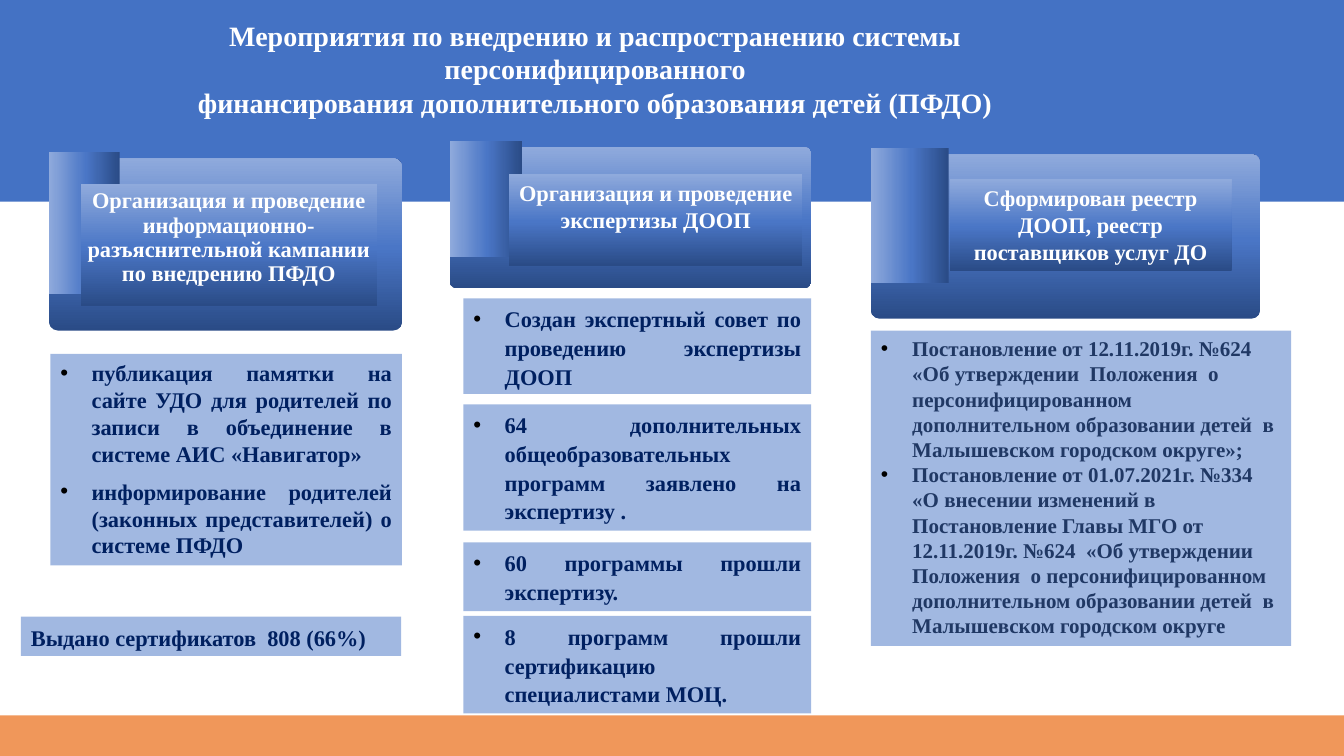
from lxml import etree
from pptx import Presentation
from pptx.dml.color import RGBColor
from pptx.enum.shapes import MSO_SHAPE as Kind
from pptx.enum.text import MSO_ANCHOR as Anchor, PP_ALIGN as Align
from pptx.oxml import parse_xml
from pptx.oxml.ns import nsdecls, qn
from pptx.util import Cm, Pt

FONT = "Times New Roman"
WHITE, NAVY, SLATE = "FFFFFF", "002060", "203864"
BLUE, ORANGE = "4472C4", "ED7D31"
STOPS = [(0, "2A4B86"), (48, "4A76C6"), (100, "8FAADC")]

TITLE = [
    "Мероприятия по внедрению и распространению системы персонифицированного",
    "финансирования дополнительного образования детей (ПФДО)",
]
HEADS = [
    ((1.24, 3.99, 8.89, 4.34), (2.03, 4.65, 7.47, 3.07),
     "Организация и проведение информационно-разъяснительной кампании по внедрению ПФДО",
     {"line": 0.9, "pads": (0, 0.13, 0, 0)}),
    ((11.33, 3.71, 9.12, 3.56), (12.83, 4.39, 7.39, 2.31),
     "Организация и проведение экспертизы ДООП", {}),
    ((21.95, 3.89, 9.8, 4.14), (23.93, 4.52, 7.11, 2.31),
     "Сформирован реестр ДООП, реестр поставщиков услуг ДО", {}),
]
STEPS = [
    (7.52, 2.41, "Создан экспертный совет по проведению экспертизы ДООП"),
    (10.19, 3.18, "64 дополнительных общеобразовательных программ заявлено на экспертизу ."),
    (13.67, 1.73, "60 программы прошли экспертизу."),
    (15.52, 2.46, "8 программ прошли сертификацию специалистами МОЦ."),
]
INFO = [
    "публикация памятки на сайте УДО для родителей по записи в объединение в системе АИС «Навигатор»",
    "информирование родителей (законных представителей) о системе ПФДО",
]
CERTS = "Выдано сертификатов  808 (66%)"
ACTS = [
    "Постановление от 12.11.2019г. №624  «Об утверждении  Положения  о персонифицированном "
    "дополнительном образовании детей  в Малышевском городском округе»;",
    "Постановление от 01.07.2021г. №334 «О внесении изменений в Постановление Главы МГО от "
    "12.11.2019г. №624  «Об утверждении  Положения  о персонифицированном "
    "дополнительном образовании детей  в Малышевском городском округе",
]

deck = Presentation()
deck.slide_width, deck.slide_height = Cm(33.87), Cm(19.05)
slide = deck.slides.add_slide(deck.slide_layouts[6])


def tint(color, code):
    color.rgb = RGBColor.from_string(code)


def block(box, code=None, alpha=100, kind=Kind.RECTANGLE):
    shape = slide.shapes.add_shape(kind, *map(Cm, box))
    shape.shadow.inherit = False
    shape.line.fill.background()
    if code:
        shape.fill.solid()
        tint(shape.fill.fore_color, code)
        if alpha < 100:
            color = shape._element.spPr.find(".//" + qn("a:srgbClr"))
            etree.SubElement(color, qn("a:alpha")).set("val", str(alpha * 1000))
    else:
        shape.fill.gradient()
        grad = shape._element.spPr.find(qn("a:gradFill"))
        stops = "".join(
            f'<a:gs pos="{pos * 1000}"><a:srgbClr val="{tone}"/></a:gs>' for pos, tone in STOPS
        )
        fresh = parse_xml(
            f'<a:gradFill {nsdecls("a")} rotWithShape="1"><a:gsLst>{stops}</a:gsLst>'
            '<a:lin ang="16200000" scaled="0"/></a:gradFill>'
        )
        grad.getparent().replace(grad, fresh)
    return shape


def bullet(para):
    props = para._p.get_or_add_pPr()
    props.set("marL", str(Cm(0.79)))
    props.set("indent", str(-Cm(0.79)))
    color = etree.SubElement(props, qn("a:buClr"))
    etree.SubElement(color, qn("a:srgbClr")).set("val", "000000")
    etree.SubElement(props, qn("a:buFont")).set("typeface", "Arial")
    etree.SubElement(props, qn("a:buChar")).set("char", "•")


def write(shape, lines, size=16, code=NAVY, align=Align.JUSTIFY, line=None, after=0,
          dots=False, pads=(0.25, 0.13, 0.25, 0.13), anchor=Anchor.TOP):
    frame = shape.text_frame
    frame.word_wrap = True
    frame.vertical_anchor = anchor
    frame.margin_left, frame.margin_top, frame.margin_right, frame.margin_bottom = map(Cm, pads)
    for i, text in enumerate(lines):
        para = frame.paragraphs[0] if i == 0 else frame.add_paragraph()
        para.alignment = align
        if line:
            para.line_spacing = line
        para.space_after = Pt(after)
        if dots:
            bullet(para)
        run = para.add_run()
        run.text = text
        run.font.name, run.font.size, run.font.bold = FONT, Pt(size), True
        tint(run.font.color, code)


block((0, 0, 33.87, 5.08), BLUE)
block((0, 18.03, 33.87, 1.02), ORANGE, 80)

for card, plate, text, style in HEADS:
    x, y, w, h = card
    block(card, kind=Kind.ROUNDED_RECTANGLE).adjustments[0] = 0.05
    wide, tall = 0.2 * w, 0.82 * h
    shift = (tall - wide) / 2
    tab = block((x - shift, y - 0.15 + shift, tall, wide))
    tab.rotation = 270
    write(block(plate), [text], code=WHITE, align=Align.CENTER, **style)

for y, h, text in STEPS:
    write(block((11.68, y, 8.76, h), BLUE, 50), [text], line=1.07, after=8, dots=True)

write(block((1.27, 8.92, 8.86, 5.33), BLUE, 50), INFO, after=8, dots=True)
write(block((0.53, 15.54, 9.58, 0.99), BLUE, 50), [CERTS], line=1.07, after=8)
write(block((21.95, 8.33, 10.59, 7.95), BLUE, 50), ACTS, size=15, code=SLATE,
      align=Align.LEFT, dots=True)

title = slide.shapes.add_textbox(*map(Cm, (2.16, 0.33, 25.68, 2.82)))
write(title, TITLE, size=20, code=WHITE, align=Align.CENTER)

deck.save("out.pptx")
